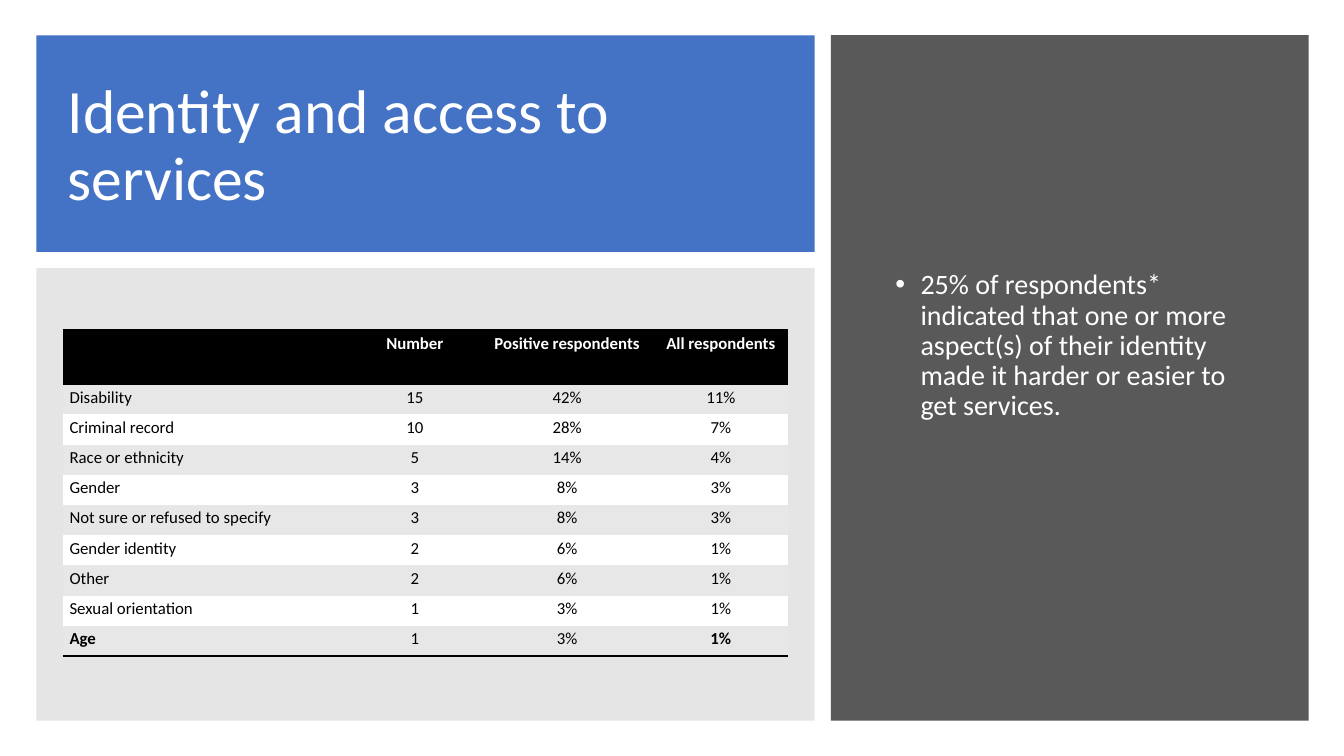
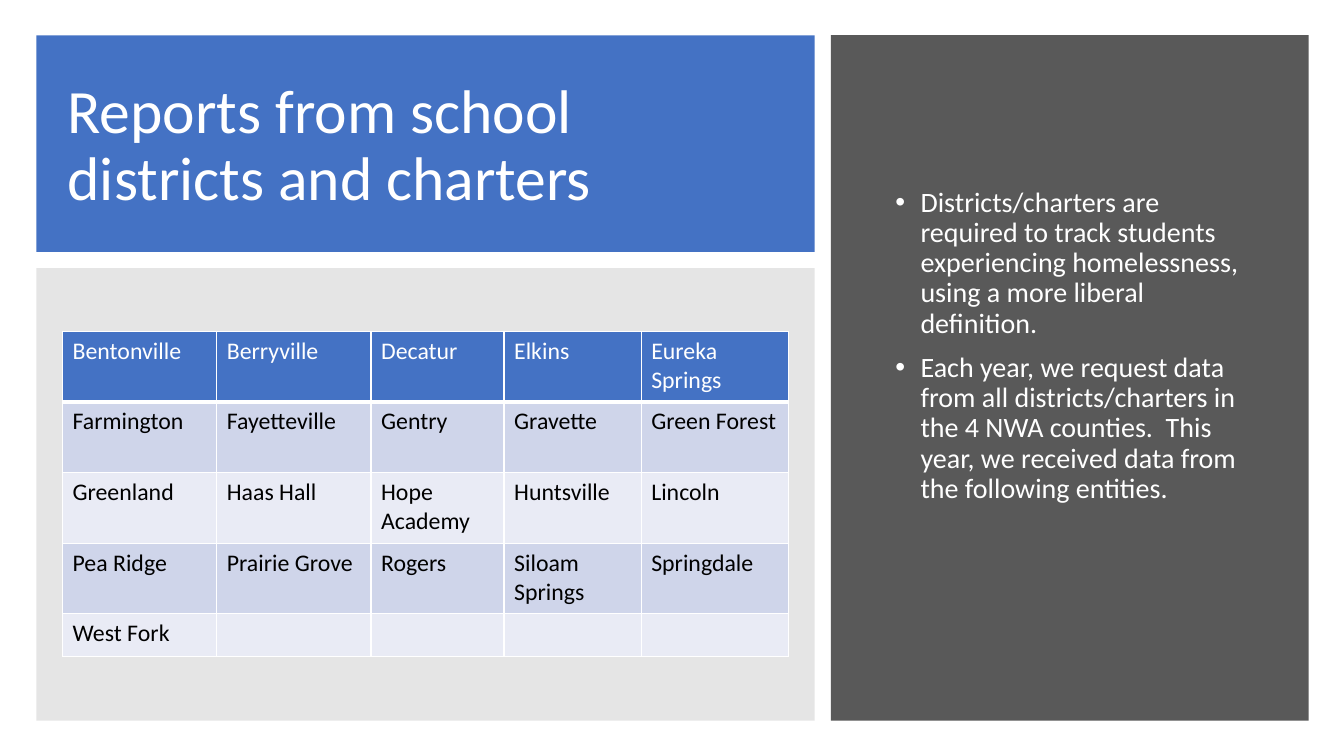
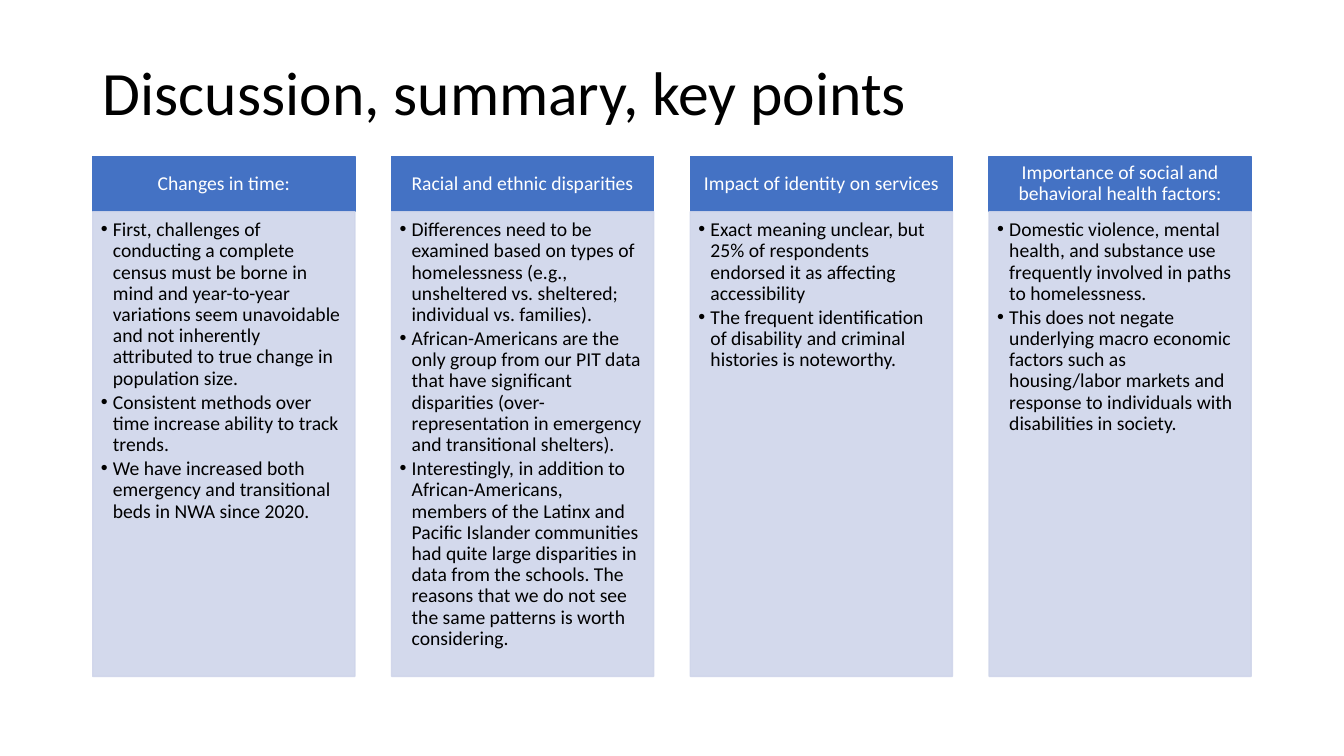
from dataclasses import dataclass

from lxml.etree import SubElement as Sub
from pptx import Presentation
from pptx.dml.color import RGBColor as Rgb
from pptx.enum.shapes import MSO_SHAPE as Kind
from pptx.enum.text import MSO_ANCHOR as Anchor, MSO_AUTO_SIZE as Fit, PP_ALIGN as Align
from pptx.oxml.ns import qn
from pptx.util import Inches, Pt


@dataclass(frozen=True)
class Theme:
    font: str = "Calibri"
    blue: str = "4472C4"
    dark: str = "595959"
    gray: str = "7F7F7F"
    white: str = "FFFFFF"
    black: str = "000000"
    ash: str = "E7E7E7"
    pale: str = "CFD5EA"
    mist: str = "E9EBF5"
    title: int = 44
    list: int = 20
    grid: int = 17
    card: int = 14
    data: int = 12


T = Theme()
HEAD = (0.36, 0.35, 7.72, 2.15)
BASE = (0.36, 2.66, 7.72, 4.49)
SIDE = (8.24, 0.35, 4.74, 6.8)
CARDS = (0.92, 1.55, 11.49, 5.16)


def inch(*nums):
    return [Inches(n) for n in nums]


def place(shape, box):
    shape.left, shape.top, shape.width, shape.height = inch(*box)


def style(para, size, color, bold=False, align=Align.LEFT):
    para.alignment = align
    for run in para.runs:
        font = run.font
        font.name, font.size, font.bold = T.font, Pt(size), bold
        font.color.rgb = Rgb.from_string(color)


def pad(item, sides):
    (item.margin_left, item.margin_top,
     item.margin_right, item.margin_bottom) = inch(*sides)


def rect(slide, box, color, alpha=100, line=False):
    shape = slide.shapes.add_shape(Kind.RECTANGLE, *inch(*box))
    shape.shadow.inherit = False
    shape.fill.solid()
    shape.fill.fore_color.rgb = Rgb.from_string(color)
    if line:
        shape.line.color.rgb = Rgb.from_string(color)
        shape.line.width = Pt(1)
    else:
        shape.line.fill.background()
    if alpha < 100:
        for tint in shape._element.spPr.iter(qn("a:srgbClr")):
            Sub(tint, qn("a:alpha"), val=str(alpha * 1000))
    return shape


def title(slide, text, box, color):
    shape = slide.shapes.title
    place(shape, box)
    frame = shape.text_frame
    frame.text = text
    frame.auto_size = Fit.NONE
    frame.vertical_anchor = Anchor.MIDDLE
    para = frame.paragraphs[0]
    para.line_spacing = 0.9
    style(para, T.title, color)


def bullets(frame, items, size, color, dent, before=0, after=0):
    frame.auto_size = Fit.NONE
    frame.word_wrap = True
    frame.text = "\n".join(items)
    for para in frame.paragraphs:
        style(para, size, color)
        para.line_spacing = 0.9
        para.space_before, para.space_after = Pt(before), Pt(after)
        props = para._p.get_or_add_pPr()
        props.set("marL", str(Inches(dent)))
        props.set("indent", str(-Inches(dent)))
        Sub(props, qn("a:buFont"), typeface="Arial")
        Sub(props, qn("a:buChar"), char="•")


def edge(cell, side, color, width):
    props = cell._tc.get_or_add_tcPr()
    line = Sub(props, qn("a:ln" + side), w=str(Pt(width)))
    if width:
        fill = Sub(line, qn("a:solidFill"))
        Sub(fill, qn("a:srgbClr"), val=color)
    else:
        Sub(line, qn("a:noFill"))


def table(slide, box, rows, cols, highs, sides, paint):
    left, top = BASE[0] + box[0], BASE[1] + box[1]
    grid = slide.shapes.add_table(
        len(rows), len(cols), *inch(left, top, sum(cols), sum(highs))).table
    grid.horz_banding = False
    for col, wide in zip(grid.columns, cols):
        col.width = Inches(wide)
    for r, row in enumerate(rows):
        grid.rows[r].height = Inches(highs[r])
        for c, text in enumerate(row):
            cell = grid.cell(r, c)
            cell.text = text
            pad(cell, sides)
            fill, lines, look = paint(r, c)
            for side, (color, width) in zip("LRTB", lines):
                edge(cell, side, color, width)
            cell.fill.solid()
            cell.fill.fore_color.rgb = Rgb.from_string(fill)
            style(cell.text_frame.paragraphs[0], **look)


def panel(deck, text, items):
    slide = deck.slides.add_slide(deck.slide_layouts[1])
    bands = [rect(slide, HEAD, T.blue), rect(slide, BASE, T.gray, 20),
             rect(slide, SIDE, T.dark)]
    for spot, band in enumerate(bands, 2):
        slide.shapes._spTree.insert(spot, band._element)
    x, y, w, h = HEAD
    title(slide, text, (x + 0.21, y + 0.22, w - 0.51, h - 0.37), T.white)
    body = slide.placeholders[1]
    x, y, w, h = SIDE
    place(body, (x + 0.54, y + 0.65, w - 0.99, h - 1.93))
    body.text_frame.vertical_anchor = Anchor.MIDDLE
    bullets(body.text_frame, items, T.list, T.white, 0.25, before=10)
    return slide


def access(deck):
    slide = panel(deck, "Identity and access to services", [
        "25% of respondents* indicated that one or more aspect(s) of their "
        "identity made it harder or easier to get services."])
    rows = [
        ("", "Number", "Positive respondents", "All respondents"),
        ("Disability", "15", "42%", "11%"),
        ("Criminal record", "10", "28%", "7%"),
        ("Race or ethnicity", "5", "14%", "4%"),
        ("Gender", "3", "8%", "3%"),
        ("Not sure or refused to specify", "3", "8%", "3%"),
        ("Gender identity", "2", "6%", "1%"),
        ("Other", "2", "6%", "1%"),
        ("Sexual orientation", "1", "3%", "1%"),
        ("Age", "1", "3%", "1%"),
    ]
    last = len(rows) - 1

    def paint(r, c):
        head = r == 0
        fill = T.black if head else T.ash if r % 2 else T.white
        rule, none = (T.black, 2), (T.black, 0)
        lines = (none, none, rule if head else none,
                 rule if r in (0, last) else none)
        look = dict(size=T.data, color=T.white if head else T.black,
                    bold=head or (r == last and c in (0, 3)),
                    align=Align.CENTER if c else Align.LEFT)
        return fill, lines, look

    table(slide, (0.26, 0.62), rows, (2.84, 1.31, 1.71, 1.34),
          [0.53] + [0.3] * last, (0.07, 0.03, 0.07, 0.03), paint)


def reports(deck):
    slide = panel(deck, "Reports from school districts and charters", [
        "Districts/charters are required to track students experiencing "
        "homelessness, using a more liberal definition.",
        "Each year, we request data from all districts/charters in the 4 NWA "
        "counties.  This year, we received data from the following entities."])
    rows = [
        ("Bentonville", "Berryville", "Decatur", "Elkins", "Eureka Springs"),
        ("Farmington", "Fayetteville", "Gentry", "Gravette", "Green Forest"),
        ("Greenland", "Haas Hall", "Hope Academy", "Huntsville", "Lincoln"),
        ("Pea Ridge", "Prairie Grove", "Rogers", "Siloam Springs", "Springdale"),
        ("West Fork", "", "", "", ""),
    ]

    def paint(r, c):
        fill = T.blue if r == 0 else T.pale if r % 2 else T.mist
        thin, thick = (T.white, 1), (T.white, 3)
        lines = (thin, thin, thick if r == 1 else thin,
                 thick if r == 0 else thin)
        return fill, lines, dict(size=T.grid, color=T.black if r else T.white)

    table(slide, (0.26, 0.63), rows, (1.53, 1.53, 1.32, 1.36, 1.46),
          [0.7] * 4 + [0.42], (0.1, 0.05, 0.1, 0.05), paint)


def card(slide, box, text, items):
    x, y, w, h = box
    top = 0.55
    head = rect(slide, (x, y, w, top), T.blue, line=True).text_frame
    head.word_wrap = True
    head.text = text
    head.vertical_anchor = Anchor.MIDDLE
    pad(head, (0.11, 0.06, 0.11, 0.06))
    para = head.paragraphs[0]
    para.line_spacing = 0.9
    style(para, T.card, T.white, align=Align.CENTER)
    body = rect(slide, (x, y + top, w, h - top), T.pale, 90, True).text_frame
    body.vertical_anchor = Anchor.TOP
    pad(body, (0.08, 0.08, 0.11, 0.12))
    bullets(body, items, T.card, T.black, 0.12, after=2.1)


def points(deck):
    slide = deck.slides.add_slide(deck.slide_layouts[5])
    title(slide, "Discussion, summary, key points", (0.92, 0.4, 11.5, 1.1), T.black)
    cards = [
        ("Changes in time:", [
            "First, challenges of conducting a complete census must be borne in "
            "mind and year-to-year variations seem unavoidable and not "
            "inherently attributed to true change in population size.",
            "Consistent methods over time increase ability to track trends.",
            "We have increased both emergency and transitional beds in NWA "
            "since 2020."]),
        ("Racial and ethnic disparities", [
            "Differences need to be examined based on types of homelessness "
            "(e.g., unsheltered vs. sheltered; individual vs. families).",
            "African-Americans are the only group from our PIT data that have "
            "significant disparities (over-representation in emergency and "
            "transitional shelters).",
            "Interestingly, in addition to African-Americans, members of the "
            "Latinx and Pacific Islander communities had quite large "
            "disparities in data from the schools. The reasons that we do not "
            "see the same patterns is worth considering."]),
        ("Impact of identity on services", [
            "Exact meaning unclear, but 25% of respondents endorsed it as "
            "affecting accessibility",
            "The frequent identification of disability and criminal histories "
            "is noteworthy."]),
        ("Importance of social and behavioral health factors:", [
            "Domestic violence, mental health, and substance use frequently "
            "involved in paths to homelessness.",
            "This does not negate underlying macro economic factors such as "
            "housing/labor markets and response to individuals with "
            "disabilities in society."]),
    ]
    x, y, w, h = CARDS
    wide = 2.6
    step = (w - wide) / (len(cards) - 1)
    for i, (text, items) in enumerate(cards):
        card(slide, (x + i * step, y, wide, h), text, items)


def main():
    deck = Presentation()
    deck.slide_width, deck.slide_height = inch(13.33, 7.5)
    for build in (access, reports, points):
        build(deck)
    deck.save("out.pptx")


if __name__ == "__main__":
    main()
